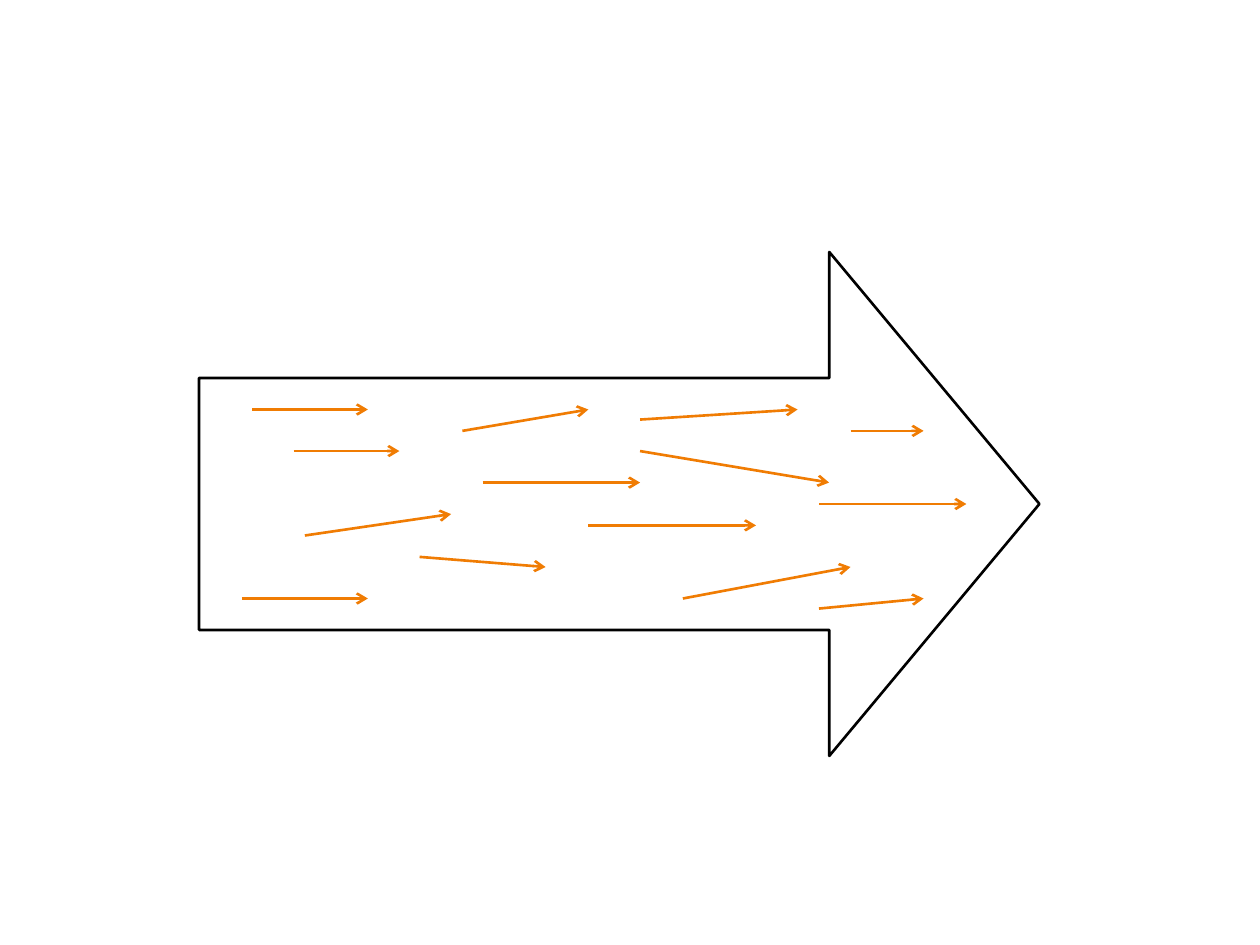
from lxml import etree
from pptx import Presentation
from pptx.dml.color import RGBColor
from pptx.enum.shapes import MSO_CONNECTOR as Connector, MSO_SHAPE as Shape
from pptx.oxml.ns import qn
from pptx.util import Inches, Pt

COLORS = {"outline": "000000", "flow": "F07C03"}

# Start x, start y, end x, end y in inches
FLOW_ARROWS = [
    (2, 3.25, 2.92, 3.25),
    (2.33, 3.58, 3.17, 3.58),
    (2.42, 4.25, 3.58, 4.08),
    (3.33, 4.42, 4.33, 4.5),
    (3.67, 3.42, 4.67, 3.25),
    (3.83, 3.83, 5.08, 3.83),
    (1.92, 4.75, 2.92, 4.75),
    (5.08, 3.33, 6.33, 3.25),
    (5.08, 3.58, 6.58, 3.83),
    (4.67, 4.17, 6, 4.17),
    (5.42, 4.75, 6.75, 4.5),
    (6.75, 3.42, 7.33, 3.42),
    (6.5, 4, 7.67, 4),
    (6.5, 4.83, 7.33, 4.75),
]


class FlowSlide:
    """Holds the line style and the current slide."""

    line_width = Pt(1.5)

    def __init__(self, slide):
        self.slide = slide

    def style_line(self, line, color):
        line.color.rgb = RGBColor.from_string(COLORS[color])
        line.width = self.line_width

    def block_arrow(self, left, top, width, height, adjustments):
        box = [Inches(value) for value in (left, top, width, height)]
        shape = self.slide.shapes.add_shape(Shape.RIGHT_ARROW, *box)
        shape.shadow.inherit = False
        shape.fill.background()
        self.style_line(shape.line, "outline")
        for index, value in enumerate(adjustments):
            shape.adjustments[index] = value

    def flow_arrow(self, *ends):
        points = [Inches(value) for value in ends]
        connector = self.slide.shapes.add_connector(Connector.STRAIGHT, *points)
        self.style_line(connector.line, "flow")
        properties = connector._element.spPr
        etree.SubElement(properties.find(qn("a:ln")), qn("a:tailEnd"), type="arrow")
        etree.SubElement(properties, qn("a:effectLst"))


def main():
    presentation = Presentation()
    presentation.slide_width = Inches(10)
    presentation.slide_height = Inches(7.5)
    blank_layout = presentation.slide_layouts[6]
    flow_slide = FlowSlide(presentation.slides.add_slide(blank_layout))

    flow_slide.block_arrow(1.58, 2, 6.67, 4, adjustments=(0.5, 0.417))
    for ends in FLOW_ARROWS:
        flow_slide.flow_arrow(*ends)

    presentation.save("out.pptx")


if __name__ == "__main__":
    main()
